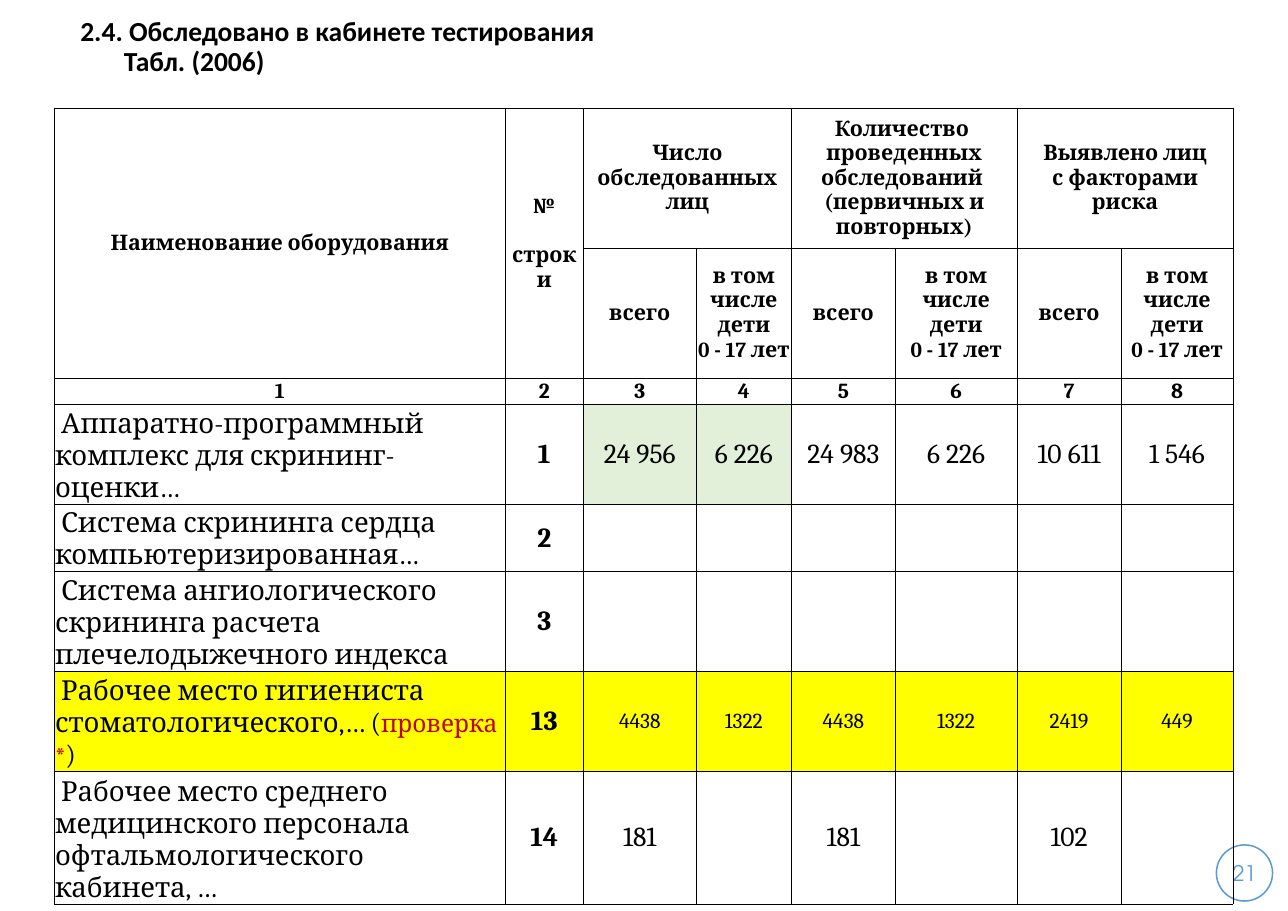
"""Build the slide on examinations in the testing room."""
import dataclasses

import pptx
import pptx.dml.color
import pptx.enum.lang
import pptx.enum.shapes
import pptx.enum.text
import pptx.oxml.ns
import pptx.util
from lxml import etree

Pt = pptx.util.Pt
ALIGN = pptx.enum.text.PP_ALIGN
ANCHOR = pptx.enum.text.MSO_ANCHOR
BLACK, RED, BLUE = "000000", "C00000", "5B9BD5"
GREEN, YELLOW = "E2F0D9", "FFFF00"


@dataclasses.dataclass
class Row:
    high: float
    cells: list[str]
    size: int = 18
    bold: bool = False
    fill: str = ""
    tint: tuple[int, ...] = ()
    left: bool = True


KIDS = "в том числе дети\v0 - 17 лет"
WIDTHS = [294.7, 51, 73.8, 62.3, 67.8, 79.7, 67.9, 73.2]
ROWS = [
    Row(91.4, ["Наименование оборудования", "№\nстроки",
               "Число обследованных лиц", "",
               "Количество \vпроведенных обследований \v(первичных и повторных)",
               "", "Выявлено лиц\vс факторами риска", ""], 14, True, left=False),
    Row(85, ["", ""] + ["всего", KIDS] * 3, 14, True, left=False),
    Row(17, [str(num) for num in range(1, 9)], 14, True, left=False),
    Row(34.5, [" Аппаратно-программный комплекс для скрининг-оценки…", "1",
               "24 956", "6 226", "24 983", "6 226", "10 611", "1 546"],
        tint=(2, 3), fill=GREEN),
    Row(34.5, [" Система скрининга сердца компьютеризированная…", "2"] + [""] * 6),
    Row(34.5, [" Система ангиологического скрининга расчета "
               "плечелодыжечного индекса", "3"] + [""] * 6),
    Row(37.4, [" Рабочее место гигиениста стоматологического,… (|проверка *|)",
               "13", "4438", "1322", "4438", "1322", "2419", "449"],
        14, fill=YELLOW, tint=tuple(range(8))),
    Row(51.1, [" Рабочее место среднего медицинского персонала "
               "офтальмологического кабинета, …", "14",
               "181", "", "181", "", "102", ""]),
]


def color(code: str) -> pptx.dml.color.RGBColor:
    """Turn a hex string into a colour."""
    return pptx.dml.color.RGBColor.from_string(code)


def style(run, face: str, size: float, code: str, bold: bool = False) -> None:
    """Format one run."""
    run.font.name = face
    run.font.size = Pt(size)
    run.font.bold = bold
    run.font.color.rgb = color(code)
    run.font.language_id = pptx.enum.lang.MSO_LANGUAGE_ID.RUSSIAN


def indent(para, first: float) -> None:
    """Indent the first line of a paragraph."""
    props = para._p.get_or_add_pPr()
    props.set("marL", "0")
    props.set("indent", str(int(Pt(first))))


def border(cell) -> None:
    """Draw thin black lines round a cell."""
    props = cell._tc.get_or_add_tcPr()
    name = pptx.oxml.ns.qn
    for side in ("a:lnL", "a:lnR", "a:lnT", "a:lnB"):
        line = etree.SubElement(props, name(side), w=str(int(Pt(0.5))))
        fill = etree.SubElement(line, name("a:solidFill"))
        etree.SubElement(fill, name("a:srgbClr"), val=BLACK)


def write(cell, text: str, size: float, bold: bool, left: bool) -> None:
    """Put text in a cell, with any marked part in red."""
    cell.margin_left = cell.margin_right = cell.margin_top = Pt(0.5)
    cell.margin_bottom = Pt(0)
    cell.vertical_anchor = ANCHOR.BOTTOM if left else ANCHOR.MIDDLE
    head, *tail = text.split("|")
    cell.text_frame.text = head
    for spot, para in enumerate(cell.text_frame.paragraphs):
        para.alignment = ALIGN.LEFT if left else ALIGN.CENTER
        if spot:
            para.space_before = Pt(16.5)
        for part in tail:
            para.add_run().text = part
        for place, run in enumerate(para.runs):
            hot = bool(tail) and place == 1
            style(run, "Cambria", 16 if hot else size, RED if hot else BLACK, bold)


def grid(slide) -> None:
    """Draw the table."""
    frame = slide.shapes.add_table(len(ROWS), len(WIDTHS), Pt(35.5), Pt(70.6),
                                   Pt(sum(WIDTHS)), Pt(sum(row.high for row in ROWS)))
    table = frame.table
    table.first_row = table.horz_banding = False
    for col, wide in zip(table.columns, WIDTHS):
        col.width = Pt(wide)
    for top, row in enumerate(ROWS):
        table.rows[top].height = Pt(row.high)
        for col, text in enumerate(row.cells):
            cell = table.cell(top, col)
            border(cell)
            if col in row.tint:
                cell.fill.solid()
                cell.fill.fore_color.rgb = color(row.fill)
            else:
                cell.fill.background()
            if text:
                name = row.left and col == 0
                size = 18 if row.left and col < 2 else row.size
                write(cell, text, size, row.bold or col == 1, name)
    for col in (0, 1):
        table.cell(0, col).merge(table.cell(1, col))
    for col in (2, 4, 6):
        table.cell(0, col).merge(table.cell(0, col + 1))


def title(slide) -> None:
    """Write the heading."""
    box = slide.shapes.add_textbox(Pt(52.5), Pt(0), Pt(737.3), Pt(68.4))
    frame = box.text_frame
    frame.word_wrap = True
    frame.vertical_anchor = ANCHOR.MIDDLE
    frame.margin_left = Pt(0)
    frame.margin_bottom = Pt(10)
    frame.text = "2.4. Обследовано в кабинете тестирования\nТабл. (2006)"
    indent(frame.paragraphs[1], 28.5)
    for para in frame.paragraphs:
        para.line_spacing = 0.9
        style(para.runs[0], "Calibri", 18, BLACK, True)


def badge(slide) -> None:
    """Draw the page number in its ring."""
    ring = slide.shapes.add_shape(pptx.enum.shapes.MSO_SHAPE.OVAL,
                                  Pt(794.9), Pt(552.2), Pt(36.7), Pt(36.7))
    ring.shadow.inherit = False
    ring.fill.background()
    ring.line.color.rgb = color(BLUE)
    ring.line.width = Pt(1)
    frame = ring.text_frame
    frame.margin_left = frame.margin_right = Pt(0)
    frame.margin_top = frame.margin_bottom = Pt(0)
    frame.vertical_anchor = ANCHOR.MIDDLE
    frame.text = "21"
    frame.paragraphs[0].alignment = ALIGN.CENTER
    style(frame.paragraphs[0].runs[0], "TeX Gyre Adventor", 14, BLUE)


def main() -> None:
    """Build and save the deck."""
    deck = pptx.Presentation()
    deck.slide_width, deck.slide_height = Pt(841.7), Pt(595.4)
    slide = deck.slides.add_slide(deck.slide_layouts[6])
    badge(slide)
    title(slide)
    grid(slide)
    deck.save("out.pptx")


if __name__ == "__main__":
    main()
